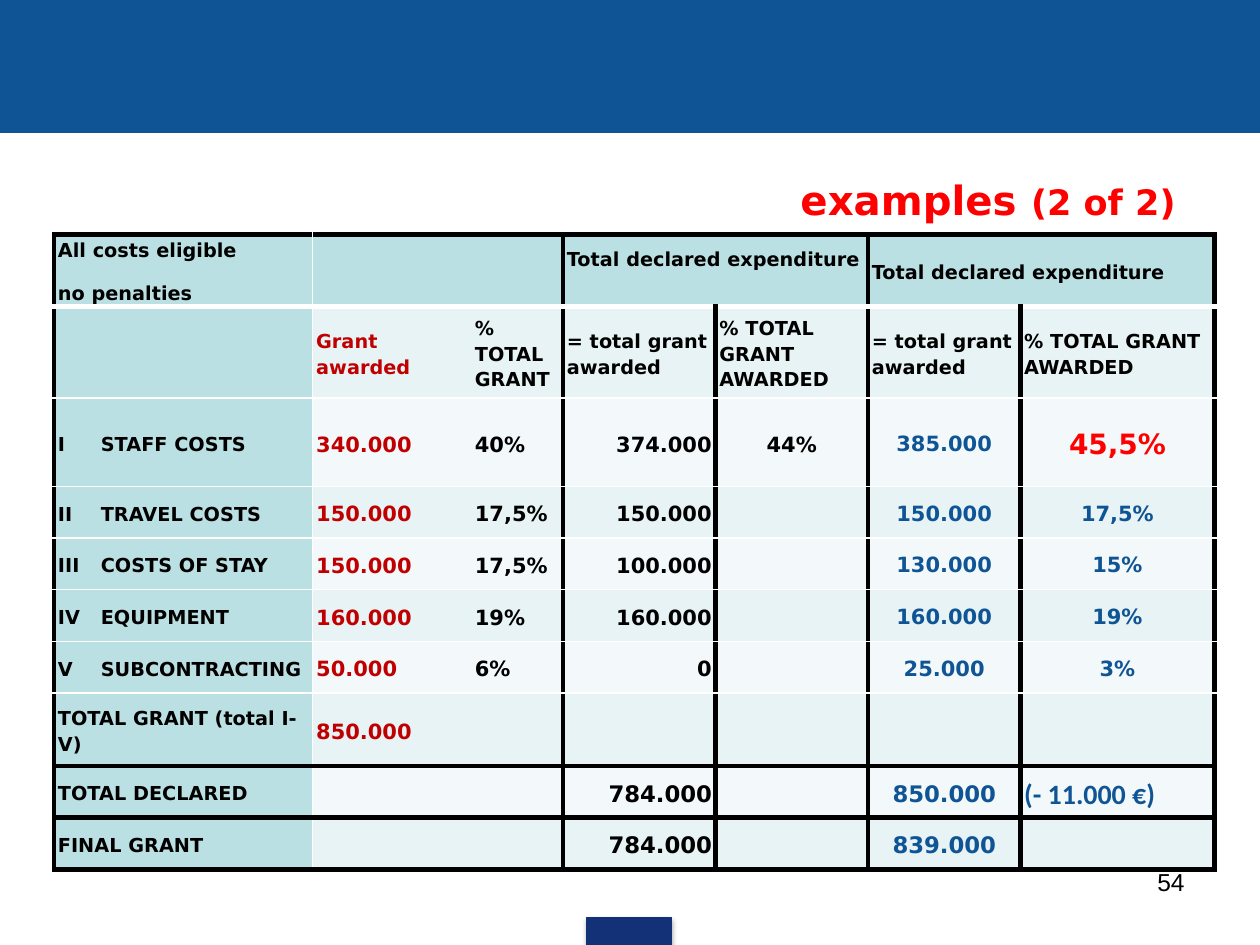
from dataclasses import dataclass

from lxml import etree
from pptx import Presentation
from pptx.dml.color import RGBColor
from pptx.enum.shapes import MSO_SHAPE
from pptx.enum.text import MSO_ANCHOR, PP_ALIGN
from pptx.oxml import parse_xml
from pptx.oxml.ns import nsdecls, qn
from pptx.util import Inches, Pt

RECT = MSO_SHAPE.RECTANGLE
LEFT, CENTER, RIGHT = PP_ALIGN.LEFT, PP_ALIGN.CENTER, PP_ALIGN.RIGHT
TOP, MIDDLE = MSO_ANCHOR.TOP, MSO_ANCHOR.MIDDLE


@dataclass(frozen=True)
class Theme:
    font: str = "DejaVu Sans"
    number_font: str = "Arial"
    note_font: str = "Calibri"
    blue: str = "0F5494"
    navy: str = "133176"
    black: str = "000000"
    white: str = "FFFFFF"
    red: str = "FF0000"
    dark_red: str = "C00000"
    header: str = "BBE0E3"
    bands: tuple = ("F3F9FA", "E7F3F4")
    title: int = 23
    subtitle: int = 20
    page: int = 14
    label: int = 11
    amount: int = 12
    total: int = 13
    accent: int = 16


THEME = Theme()
TAB = 0.34
COLS = [2.05, 1.26, 0.73, 1.21, 1.21, 1.21, 1.54]
ROWS = [0.38, 0.73, 0.7] + [0.41] * 4 + [0.58, 0.41, 0.41]
DECLARED = "Total declared expenditure \u00a0"
AWARDED = ["= total grant awarded", "% TOTAL GRANT AWARDED"]
COSTS = [
    ["All costs eligible\nno penalties", "", "", DECLARED, "", DECLARED, ""],
    ["", "Grant awarded", "% TOTAL GRANT"] + AWARDED * 2,
    ["I\tSTAFF COSTS", "340.000", "40%", "374.000", "44%", "385.000", "45,5%"],
    ["II\tTRAVEL COSTS", "150.000", "17,5%", "150.000", "", "150.000", "17,5%"],
    ["III\tCOSTS OF STAY", "150.000", "17,5%", "100.000", "", "130.000", "15%"],
    ["IV\tEQUIPMENT", "160.000", "19%", "160.000", "", "160.000", "19%"],
    ["V\tSUBCONTRACTING", "50.000", "6%", "0", "", "25.000", "3%"],
    ["TOTAL GRANT (total I-V)", "850.000", "", "", "", "", ""],
    ["TOTAL DECLARED", "", "", "784.000", "", "850.000", "(- 11.000 €)"],
    ["FINAL GRANT", "", "", "784.000", "", "839.000", ""],
]
THICK, PALE, THIN = (THEME.black, 3), (THEME.white, 3), (THEME.white, 1)
ROW_LINES = [THICK, PALE] + [THIN] * 6 + [THICK] * 3
COL_LINES = [THICK, THIN, None] + [THICK] * 5
SPECIAL = {
    (2, 6): dict(size=THEME.accent, color=THEME.red),
    (8, 6): dict(size=THEME.accent, font=THEME.note_font, align=LEFT),
}


def add_run(p, text, size=THEME.label, color=THEME.black, font=THEME.font, bold=True):
    r = p.add_run()
    r.text = text
    r.font.size = Pt(size)
    r.font.name = font
    r.font.bold = bold
    r.font.color.rgb = RGBColor.from_string(color)


def write(tf, text, align=LEFT, spacing=None, after=None, **fmt):
    for i, line in enumerate(text.split("\n")):
        p = tf.add_paragraph() if i else tf.paragraphs[0]
        if "\t" in line:
            tabs = etree.SubElement(p._p.get_or_add_pPr(), qn("a:tabLst"))
            etree.SubElement(tabs, qn("a:tab"), pos=str(Inches(TAB)), algn="l")
        p.alignment = align
        p.line_spacing = spacing
        if after is not None:
            p.space_after = Pt(after)
        add_run(p, line, **fmt)
    return p


def add_text(slide, box, text, anchor=TOP, **fmt):
    tf = slide.shapes.add_textbox(*map(Inches, box)).text_frame
    tf.word_wrap = True
    tf.vertical_anchor = anchor
    return write(tf, text, **fmt)


def add_bar(slide, box, color):
    sp = slide.shapes.add_shape(RECT, *map(Inches, box))
    sp.shadow.inherit = False
    sp.fill.solid()
    sp.fill.fore_color.rgb = RGBColor.from_string(color)
    sp.line.color.rgb = RGBColor.from_string(color)
    sp.line.width = Pt(0.75)
    return sp


def add_shadow(sp):
    sp._element.spPr.find(qn("a:effectLst")).append(parse_xml(
        f'<a:outerShdw {nsdecls("a")} blurRad="{Pt(3.1)}" dist="{Pt(1.8)}" '
        f'dir="5400000" rotWithShape="0"><a:srgbClr val="{THEME.black}">'
        '<a:alpha val="35000"/></a:srgbClr></a:outerShdw>'))


def set_borders(cell, row, col):
    edges = dict(lnL=COL_LINES[col], lnR=COL_LINES[col + 1],
                 lnT=ROW_LINES[row], lnB=ROW_LINES[row + 1])
    tcPr = cell._tc.get_or_add_tcPr()
    for i, (tag, edge) in enumerate(edges.items()):
        color, width = edge or (None, 0)
        ln = etree.Element(qn(f"a:{tag}"), w=str(Pt(width)))
        fill = etree.SubElement(ln, qn("a:solidFill" if edge else "a:noFill"))
        if edge:
            etree.SubElement(fill, qn("a:srgbClr"), val=color)
        tcPr.insert(i, ln)


def cell_format(row, col):
    fmt = dict(spacing=1.15, after=10)
    if row == 1 and col == 1:
        fmt["color"] = THEME.dark_red
    if row > 1 and col:
        fmt["size"] = THEME.amount if row < 8 else THEME.total
        fmt["align"] = [LEFT, LEFT, LEFT, RIGHT, CENTER, CENTER, CENTER][col]
        fmt["color"] = {1: THEME.dark_red, 5: THEME.blue, 6: THEME.blue}.get(col, THEME.black)
        if col > 4 and row < 8:
            fmt["after"] = 0
    return fmt | SPECIAL.get((row, col), {})


def fill_cell(cell, row, col, text):
    wide = col > 4 and 1 < row < 7
    cell.margin_left = cell.margin_right = Inches(0.06 if wide else 0.03)
    cell.margin_top = Inches(0 if wide else 0.01)
    cell.margin_bottom = 0
    cell.vertical_anchor = MIDDLE
    cell.fill.solid()
    color = THEME.header if row == 0 or col == 0 else THEME.bands[row % 2]
    cell.fill.fore_color.rgb = RGBColor.from_string(color)
    set_borders(cell, row, col)
    if text:
        write(cell.text_frame, text, **cell_format(row, col))


def add_cost_table(slide):
    box = map(Inches, (0.43, 1.86, sum(COLS), sum(ROWS)))
    table = slide.shapes.add_table(len(ROWS), len(COLS), *box).table
    for column, width in zip(table.columns, COLS):
        column.width = Inches(width)
    for row, height in zip(table.rows, ROWS):
        row.height = Inches(height)
    for col in (3, 5):
        table.cell(0, col).merge(table.cell(0, col + 1))
    for row, texts in enumerate(COSTS):
        for col, text in enumerate(texts):
            fill_cell(table.cell(row, col), row, col, text)


def main():
    prs = Presentation()
    prs.slide_width, prs.slide_height = Inches(10), Inches(7.5)
    slide = prs.slides.add_slide(prs.slide_layouts[6])
    add_bar(slide, (0, 0, 10, 1.05), THEME.blue)
    add_shadow(add_bar(slide, (4.66, 7.28, 0.67, 0.22), THEME.navy))
    p = add_text(slide, (0.43, 1.31, 9, 0.55), "examples ", anchor=MIDDLE,
                 align=RIGHT, size=THEME.title, color=THEME.red)
    add_run(p, "(2 of 2)", size=THEME.subtitle, color=THEME.red)
    add_text(slide, (7.17, 6.83, 2.33, 0.52), "54", align=RIGHT,
             size=THEME.page, font=THEME.number_font, bold=False)
    add_cost_table(slide)
    prs.save("out.pptx")


if __name__ == "__main__":
    main()
